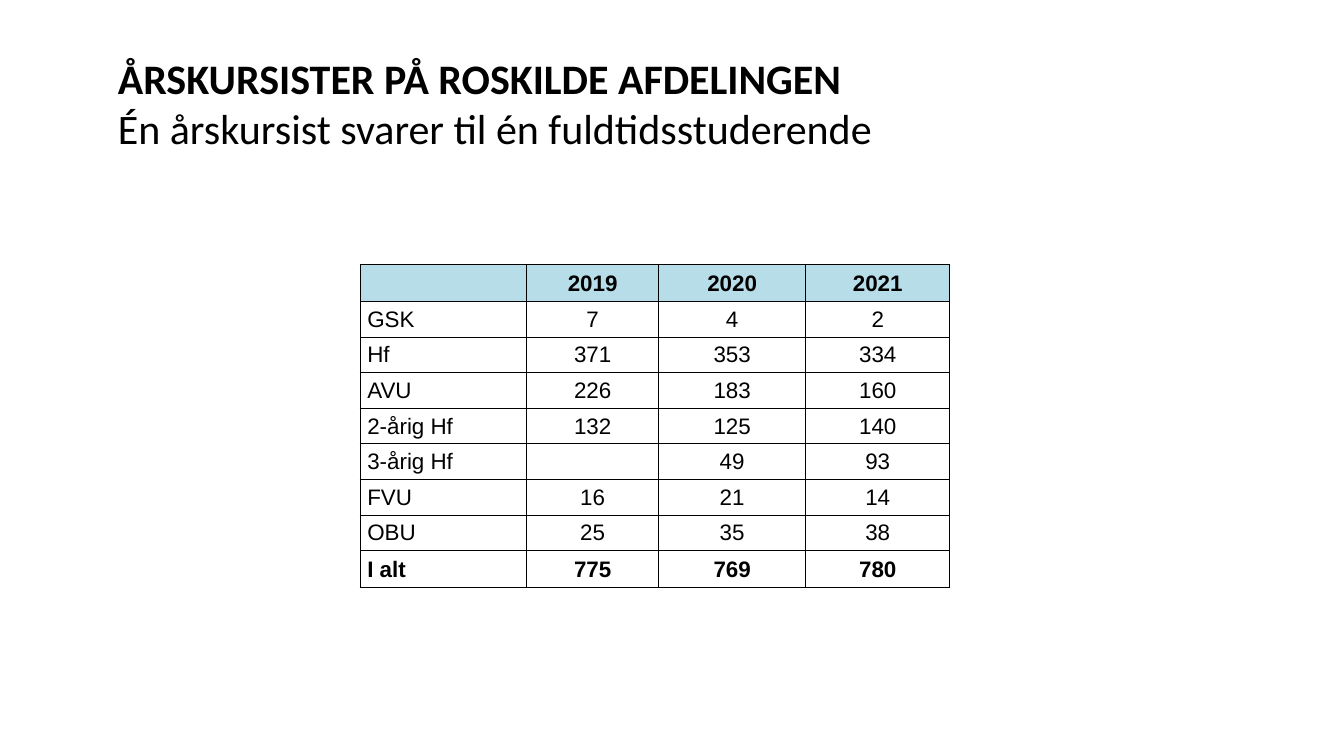
from lxml import etree
from pptx import Presentation
from pptx.dml.color import RGBColor
from pptx.enum import text
from pptx.oxml import ns
from pptx.util import Pt

TITLE = [("ÅRSKURSISTER PÅ ROSKILDE AFDELINGEN", True),
         ("Én årskursist svarer til én fuldtidsstuderende", False)]
ROWS = [
    ("", "2019", "2020", "2021"),
    ("GSK", "7", "4", "2"),
    ("Hf", "371", "353", "334"),
    ("AVU", "226", "183", "160"),
    ("2-årig Hf", "132", "125", "140"),
    ("3-årig Hf", "", "49", "93"),
    ("FVU", "16", "21", "14"),
    ("OBU", "25", "35", "38"),
    ("I alt", "775", "769", "780"),
]
WIDTHS = [119, 94.3, 105, 103]
EDGE, INNER = 26.5, 25.45  # heights of the first and last rows, and of the others
COLORS = {"ink": "000000", "head": "B7DEE8"}


def write(para, words, font, size, bold):
    run = para.add_run()
    run.text = words
    run.font.name = font
    run.font.size = Pt(size)
    run.font.bold = bold
    run.font.color.rgb = RGBColor.from_string(COLORS["ink"])


def border(cell):
    """Draw a thin line on all four sides of the cell."""
    props = cell._tc.get_or_add_tcPr()
    for spot, side in enumerate(("lnL", "lnR", "lnT", "lnB")):
        line = etree.Element(ns.qn("a:" + side), w=str(Pt(0.5)))
        fill = etree.SubElement(line, ns.qn("a:solidFill"))
        etree.SubElement(fill, ns.qn("a:srgbClr"), val=COLORS["ink"])
        props.insert(spot, line)


def add_title(slide):
    title = slide.shapes.title
    title.left, title.top, title.width, title.height = Pt(77), Pt(33.8), Pt(602), Pt(80)
    frame = title.text_frame
    frame.word_wrap = True
    frame.auto_size = text.MSO_AUTO_SIZE.NONE
    frame.vertical_anchor = text.MSO_ANCHOR.TOP
    for i, (words, bold) in enumerate(TITLE):
        para = frame.add_paragraph() if i else frame.paragraphs[0]
        para.alignment = text.PP_ALIGN.LEFT
        write(para, words, "Calibri", 30, bold)


def add_grid(slide):
    last = len(ROWS) - 1
    heights = [EDGE if r in (0, last) else INNER for r in range(len(ROWS))]
    grid = slide.shapes.add_table(len(ROWS), len(WIDTHS), Pt(257.2), Pt(188.8),
                                  Pt(sum(WIDTHS)), Pt(sum(heights))).table
    grid.horz_banding = False
    grid.first_row = False
    for col, width in zip(grid.columns, WIDTHS):
        col.width = Pt(width)
    for r, row in enumerate(ROWS):
        grid.rows[r].height = Pt(heights[r])
        for c, words in enumerate(row):
            cell = grid.cell(r, c)
            cell.margin_left = Pt(0.7 if c else 5.2)
            cell.margin_right = cell.margin_top = Pt(0.7)
            cell.margin_bottom = 0
            cell.vertical_anchor = text.MSO_ANCHOR.MIDDLE
            if r == 0:
                cell.fill.solid()
                cell.fill.fore_color.rgb = RGBColor.from_string(COLORS["head"])
            else:
                cell.fill.background()
            border(cell)
            para = cell.text_frame.paragraphs[0]
            para.alignment = text.PP_ALIGN.CENTER if c else text.PP_ALIGN.LEFT
            if words:
                write(para, words, "Arial", 16, r in (0, last))


def main():
    deck = Presentation()
    deck.slide_width, deck.slide_height = Pt(960), Pt(540)
    slide = deck.slides.add_slide(deck.slide_layouts[5])
    add_title(slide)
    add_grid(slide)
    deck.save("out.pptx")


if __name__ == "__main__":
    main()
